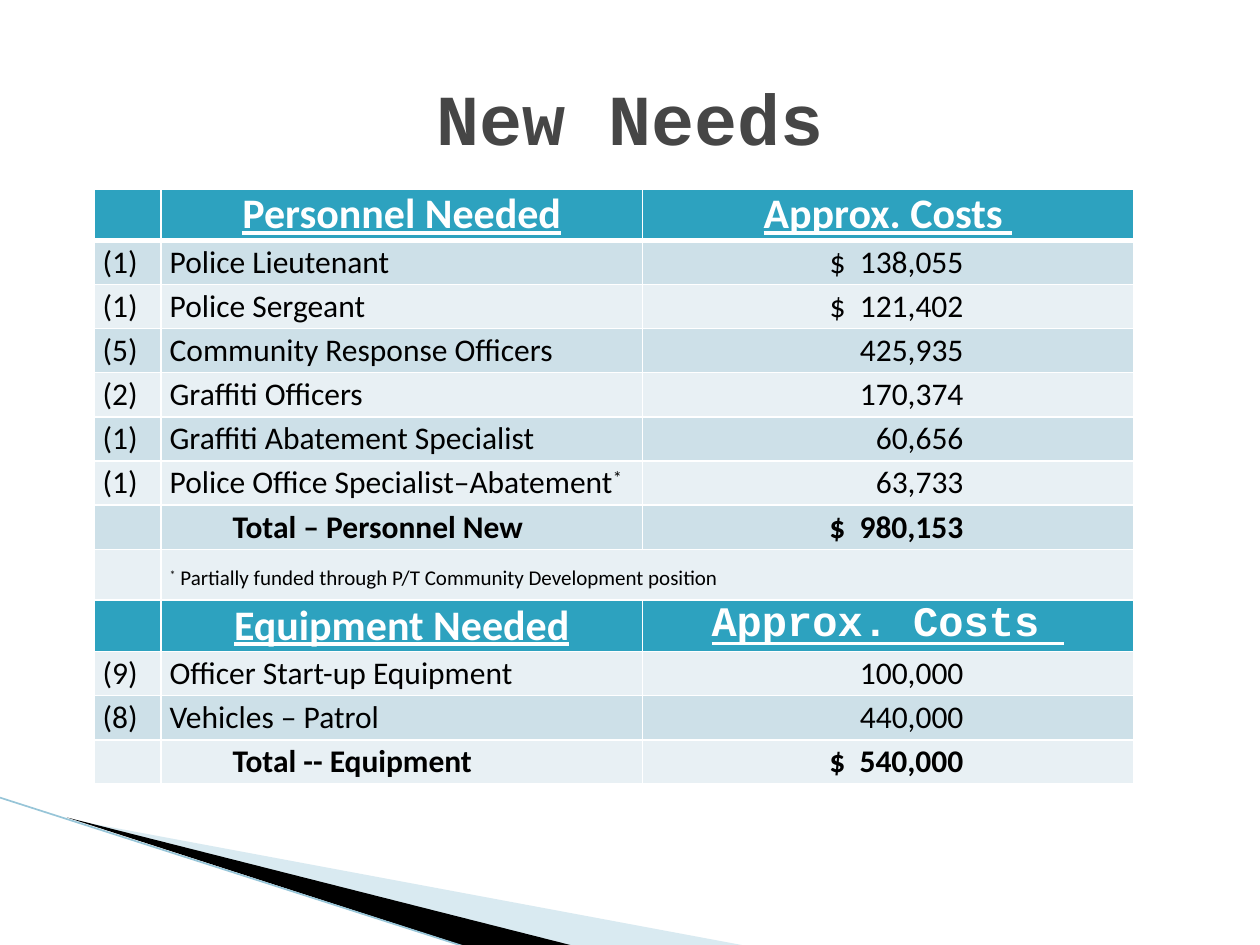
from lxml import etree
from pptx import Presentation
from pptx.dml.color import RGBColor
from pptx.enum import shapes, text
from pptx.oxml import ns
from pptx.util import Cm, Pt

HEADER, BANDS = "2DA2BF", ("E8F0F4", "CDE0E8")
CENTER = text.PP_ALIGN.CENTER
BODY = dict(size=Pt(18), name="Calibri", bold=False)
HEADING = dict(size=Pt(24), name="Calibri", bold=True, underline=True)
TITLE = dict(size=Pt(41), name="Courier New", bold=True)
COLUMNS = (1.35, 9.7, 9.9)
ROW_HEIGHT = 0.89
HEIGHTS = {0: 1.02, 8: 1.02, 9: 1.04}
HEADER_ROWS, TOTAL_ROWS, NOTE_ROW = (0, 9), (7, 12), 8
ROWS = [
    ("", "Personnel Needed", "Approx. Costs "),
    ("(1)", "Police Lieutenant", "$  138,055"),
    ("(1)", "Police Sergeant", "$  121,402"),
    ("(5)", "Community Response Officers", "425,935"),
    ("(2)", "Graffiti Officers", "170,374"),
    ("(1)", "Graffiti Abatement Specialist", "60,656"),
    ("(1)", "Police Office Specialist–Abatement*", "63,733"),
    ("", "Total – Personnel New", "$  980,153"),
    ("", "* Partially funded through P/T Community Development position", ""),
    ("", "Equipment Needed", "Approx. Costs "),
    ("(9)", "Officer Start-up Equipment", "100,000"),
    ("(8)", "Vehicles – Patrol", "440,000"),
    ("", "Total -- Equipment", "$  540,000"),
]


def rgb(color):
    return RGBColor.from_string(color)


def add_child(parent, tag, **attrs):
    return etree.SubElement(parent, ns.qn(tag), attrs)


def paint(fill, color):
    fill.solid()
    fill.fore_color.rgb = rgb(color)


def write(p, words, color, style):
    """Add the words to a paragraph, with any asterisk raised."""
    for part in words.partition("*"):
        if not part:
            continue
        r = p.add_run()
        r.text = part
        for key, value in style.items():
            setattr(r.font, key, value)
        r.font.color.rgb = rgb(color)
        if part == "*":
            r.font._element.set("baseline", "30000")


def add_polygon(s, points, color, alpha=None):
    start, *rest = [(Cm(x), Cm(y)) for x, y in points]
    builder = s.shapes.build_freeform(*start)
    builder.add_line_segments(rest, close=True)
    sp = builder.convert_to_shape()
    sp.shadow.inherit = False
    sp.line.fill.background()
    paint(sp.fill, color)
    if alpha:
        srgb = sp._element.spPr.find(".//" + ns.qn("a:srgbClr"))
        add_child(srgb, "a:alpha", val=str(alpha * 1000))


def add_edge_line(s):
    line = s.shapes.add_connector(
        shapes.MSO_CONNECTOR.STRAIGHT, Cm(0), Cm(16.08), Cm(9.42), Cm(19.1))
    line.line.color.rgb = rgb("97C5D8")
    line.line.width = Pt(0.95)
    add_child(line._element.spPr, "a:effectLst")


def add_title(s, words):
    box = s.shapes.add_textbox(Cm(1.27), Cm(0.76), Cm(22.86), Cm(3.18))
    tf = box.text_frame
    tf.word_wrap = True
    tf.vertical_anchor = text.MSO_ANCHOR.MIDDLE
    p = tf.paragraphs[0]
    p.alignment = CENTER
    write(p, words, "464646", TITLE)


def format_cell(cell, row):
    """Set borders, fill and margins."""
    tc_pr = cell._tc.get_or_add_tcPr()
    for side in "LRTB":
        thick = (row, side) in ((0, "B"), (1, "T"))
        ln = add_child(tc_pr, f"a:ln{side}", w=str(Pt(3 if thick else 1)))
        add_child(add_child(ln, "a:solidFill"), "a:srgbClr", val="FFFFFF")
    paint(cell.fill, HEADER if row in HEADER_ROWS else BANDS[row % 2])
    cell.margin_left = cell.margin_right = Cm(0.17)
    cell.margin_top = cell.margin_bottom = Cm(0)
    cell.vertical_anchor = text.MSO_ANCHOR.MIDDLE


def fill_cell(cell, row, col, words):
    p = cell.text_frame.paragraphs[0]
    p_pr = p._p.get_or_add_pPr()
    style, color = dict(BODY), "000000"
    if row in HEADER_ROWS:
        style, color = dict(HEADING), "FFFFFF"
        p.alignment = CENTER
        if (row, col) == (9, 2):
            style["name"] = "Courier New"
    elif col == 2:
        p.alignment = CENTER
        tabs = add_child(p_pr, "a:tabLst")
        add_child(tabs, "a:tab", pos=str(Cm(3.05)), algn="r")
        words = "\t" + words
    if row in TOTAL_ROWS:
        style["bold"] = True
        if col == 1:
            p_pr.set("marL", str(Cm(1.27)))
    if row == NOTE_ROW:
        style["size"] = Pt(12)
        cell.vertical_anchor = text.MSO_ANCHOR.BOTTOM
        cell.margin_bottom = Cm(0.18)
    write(p, words, color, style)


def add_cost_table(s):
    heights = [HEIGHTS.get(i, ROW_HEIGHT) for i in range(len(ROWS))]
    table = s.shapes.add_table(
        len(ROWS), len(COLUMNS), Cm(1.9), Cm(3.81),
        Cm(sum(COLUMNS)), Cm(sum(heights))).table
    for column, width in zip(table.columns, COLUMNS):
        column.width = Cm(width)
    for i, (row, height) in enumerate(zip(table.rows, heights)):
        row.height = Cm(height)
        for j, words in enumerate(ROWS[i]):
            cell = table.cell(i, j)
            format_cell(cell, i)
            if words:
                fill_cell(cell, i, j, words)
    table.cell(NOTE_ROW, 1).merge(table.cell(NOTE_ROW, 2))


def main():
    prs = Presentation()
    prs.slide_width, prs.slide_height = Cm(25.4), Cm(19.05)
    s = prs.slides.add_slide(prs.slide_layouts[6])
    add_polygon(s, [(1.4, 16.52), (15.11, 19.08), (11.58, 19.08)], "A0CBDC", 40)
    add_polygon(s, [(1.35, 16.48), (11.61, 19.08), (9.45, 19.1)], "000000")
    add_edge_line(s)
    add_cost_table(s)
    add_title(s, "New Needs")
    prs.save("out.pptx")


if __name__ == "__main__":
    main()
